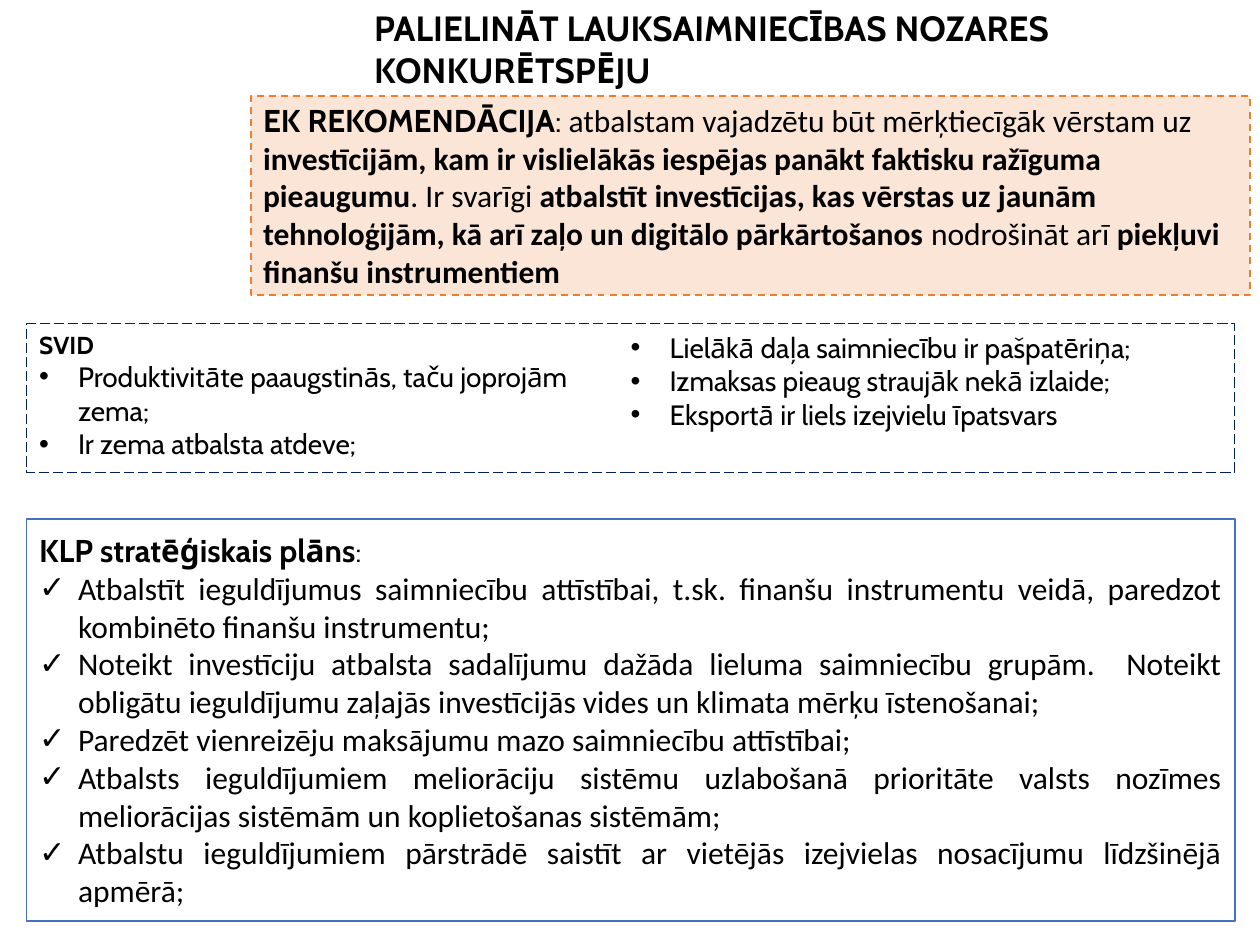
import pptx
import pptx.util
import pptx.dml.color
import pptx.enum.dml
import pptx.enum.shapes
import pptx.enum.text
import pptx.oxml.ns
from lxml import etree

Inches, Pt = pptx.util.Inches, pptx.util.Pt
ALIGN, ANCHOR = pptx.enum.text.PP_ALIGN, pptx.enum.text.MSO_ANCHOR
DASH = pptx.enum.dml.MSO_LINE

THEME = {
    "head": "Cabin", "body": "Calibri",
    "title": 20, "large": 18, "medium": 16, "small": 14,
    "text": "000000", "peach": "FBE5D6", "white": "FFFFFF",
    "orange": "ED7D31", "navy": "002060", "blue": "4472C4",
}

# Content: a run is (text, font, size, bold)
TITLE = [("PALIELINĀT LAUKSAIMNIECĪBAS NOZARES KONKURĒTSPĒJU", "head", "title", True)]

RECOMMENDATION = [
    ("EK REKOMENDĀCIJA", "head", "large", True),
    (": ", "head", "large", False),
    ("atbalstam vajadzētu būt mērķtiecīgāk vērstam uz ", "body", "large", False),
    ("investīcijām, kam ir vislielākās iespējas panākt faktisku ražīguma pieaugumu",
     "body", "large", True),
    (". Ir svarīgi ", "body", "large", False),
    ("atbalstīt investīcijas, kas vērstas uz jaunām tehnoloģijām, "
     "kā arī zaļo un digitālo pārkārtošanos", "body", "large", True),
    (" nodrošināt arī ", "body", "large", False),
    ("piekļuvi finanšu instrumentiem", "body", "large", True),
]

SWOT_HEAD = [("SVID", "head", "small", True)]
SWOT = [
    "Produktivitāte paaugstinās, taču joprojām zema;",
    "Ir zema atbalsta atdeve;",
    "Lielākā daļa saimniecību ir pašpatēriņa;",
    "Izmaksas pieaug straujāk nekā izlaide;",
    "Eksportā ir liels izejvielu īpatsvars",
]

PLAN_HEAD = [("KLP stratēģiskais plāns", "head", "large", True),
             (":", "head", "medium", False)]
PLAN = [
    "Atbalstīt ieguldījumus saimniecību attīstībai, t.sk. finanšu instrumentu veidā, "
    "paredzot kombinēto finanšu instrumentu;",
    "Noteikt investīciju atbalsta sadalījumu dažāda lieluma saimniecību grupām.  Noteikt "
    "obligātu ieguldījumu zaļajās investīcijās vides un klimata mērķu īstenošanai;",
    "Paredzēt vienreizēju maksājumu mazo saimniecību attīstībai;",
    "Atbalsts ieguldījumiem meliorāciju sistēmu uzlabošanā prioritāte valsts nozīmes "
    "meliorācijas sistēmām un koplietošanas sistēmām;",
    "Atbalstu ieguldījumiem pārstrādē saistīt ar vietējās izejvielas nosacījumu "
    "līdzšinējā apmērā;",
]

# Positions: left, top, width, height
TITLE_BOX = (2.87, 0, 7.06, 0.77)
RECOMMENDATION_BOX = (1.99, 0.76, 7.93, 1.58)
SWOT_BOX = (0.21, 2.57, 9.59, 1.18)
PLAN_BOX = (0.21, 4.12, 9.59, 3.19)
INDENT = 0.31


def color(name):
    return pptx.dml.color.RGBColor.from_string(THEME[name])


def place(s, box, anchor):
    s.left, s.top, s.width, s.height = map(Inches, box)
    tf = s.text_frame
    tf.word_wrap = True
    tf.auto_size = pptx.enum.text.MSO_AUTO_SIZE.NONE
    tf.vertical_anchor = anchor
    return tf


def style_box(s, fill, line, width, dash):
    if fill:
        s.fill.solid()
        s.fill.fore_color.rgb = color(fill)
    else:
        s.fill.background()
    s.line.color.rgb = color(line)
    s.line.width = Pt(width)
    s.line.dash_style = dash


def write(p, runs, align=ALIGN.LEFT, bullet=None):
    p.alignment = align
    p.space_before = Pt(0)
    pPr = p._p.get_or_add_pPr()
    indent = Inches(INDENT) if bullet else 0
    pPr.set("marL", str(indent))
    pPr.set("indent", str(-indent))
    if bullet:
        bu = etree.SubElement(pPr, pptx.oxml.ns.qn("a:buChar"))
        bu.set("char", bullet)
    else:
        etree.SubElement(pPr, pptx.oxml.ns.qn("a:buNone"))
    for text, font, size, bold in runs:
        r = p.add_run()
        r.text = text
        r.font.name = THEME[font]
        r.font.size = Pt(THEME[size])
        r.font.bold = bold
        r.font.color.rgb = color("text")


def write_list(tf, head, items, bullet, font, size, left_items=()):
    write(tf.paragraphs[0], head, ALIGN.JUSTIFY)
    for i, item in enumerate(items):
        align = ALIGN.LEFT if i in left_items else ALIGN.JUSTIFY
        write(tf.add_paragraph(), [(item, font, size, False)], align, bullet)


prs = pptx.Presentation()
prs.slide_width, prs.slide_height = Inches(10), Inches(7.5)
slide = prs.slides.add_slide(prs.slide_layouts.get_by_name("Two Content"))
title, swot, plan = list(slide.placeholders)[:3]
for extra in list(slide.placeholders)[3:]:
    extra.element.getparent().remove(extra.element)

# Title
write(place(title, TITLE_BOX, ANCHOR.TOP).paragraphs[0], TITLE)

# Recommendation
s = slide.shapes.add_shape(pptx.enum.shapes.MSO_SHAPE.RECTANGLE,
                           *map(Inches, RECOMMENDATION_BOX))
s.shadow.inherit = False
style_box(s, "peach", "orange", 1, DASH.DASH)
write(place(s, RECOMMENDATION_BOX, ANCHOR.MIDDLE).paragraphs[0], RECOMMENDATION)

# Strengths and weaknesses in two columns
style_box(swot, None, "navy", 0.75, DASH.LONG_DASH)
tf = place(swot, SWOT_BOX, ANCHOR.TOP)
tf._txBody.bodyPr.set("numCol", "2")
write_list(tf, SWOT_HEAD, SWOT, "•", "head", "medium", left_items=(0,))

# Strategic plan
style_box(plan, "white", "blue", 1, DASH.SOLID)
write_list(place(plan, PLAN_BOX, ANCHOR.MIDDLE), PLAN_HEAD, PLAN, "✓", "body", "large")

prs.save("out.pptx")
